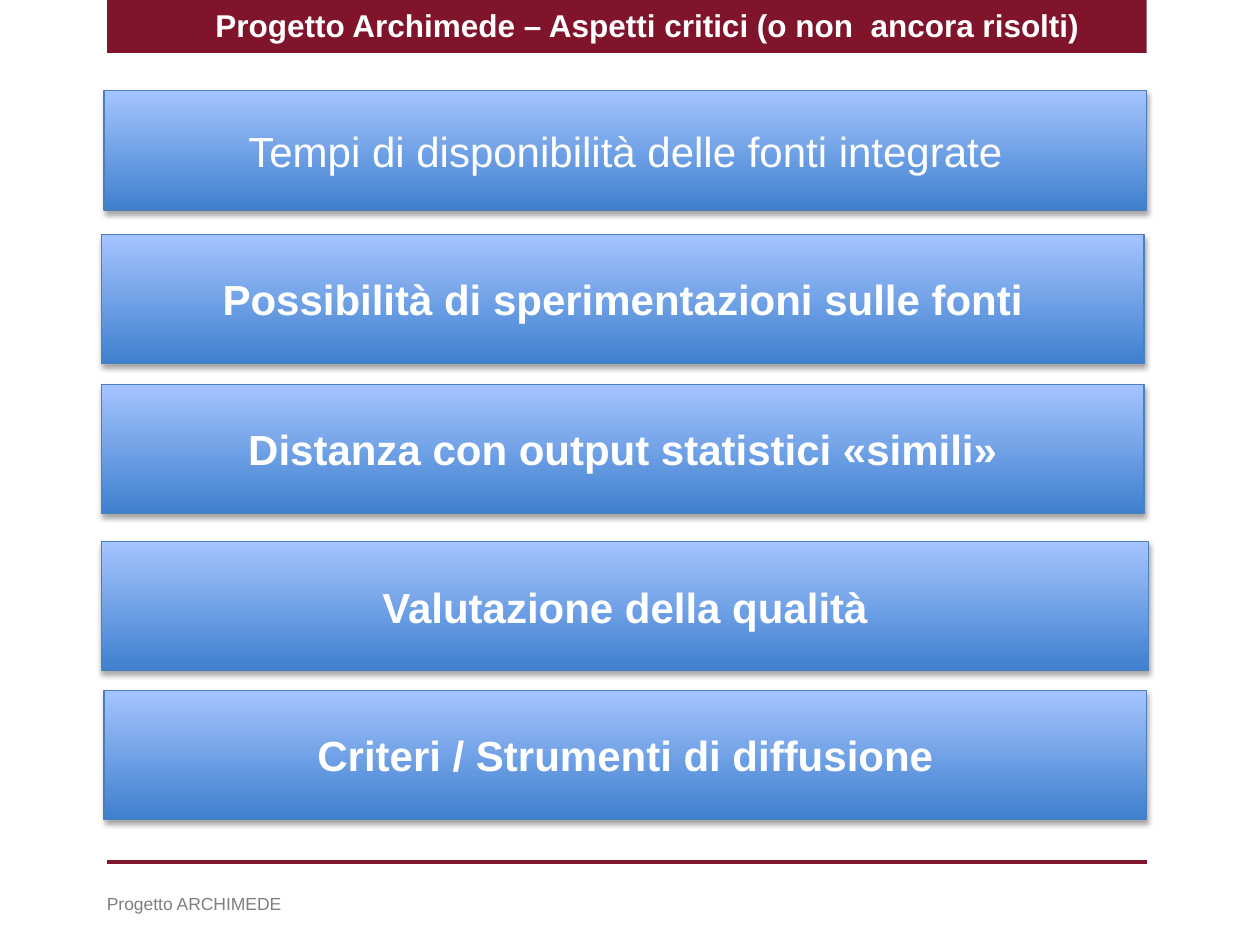
import pptx
import pptx.util
import pptx.dml.color
import pptx.enum.shapes
import pptx.enum.text
import pptx.oxml
import pptx.oxml.ns
import lxml.etree

Pt = pptx.util.Pt
PP_ALIGN = pptx.enum.text.PP_ALIGN
ANCHOR = pptx.enum.text.MSO_ANCHOR
RECTANGLE = pptx.enum.shapes.MSO_SHAPE.RECTANGLE

HEADING = "Progetto Archimede – Aspetti critici (o non  ancora risolti)"
FOOTER = "Progetto ARCHIMEDE"
ISSUES = [
    {"text": "Tempi di disponibilità delle fonti integrate", "box": (59.5, 51.9, 595.8, 68.1), "bold": False},
    {"text": "Possibilità di sperimentazioni sulle fonti", "box": (58, 134.1, 595.8, 73.7)},
    {"text": "Distanza con output statistici «simili»", "box": (58, 219.7, 595.8, 73.7)},
    {"text": "Valutazione della qualità", "box": (58, 309.6, 598.4, 73.7)},
    {"text": "Criteri / Strumenti di diffusione", "box": (59.5, 394.5, 595.8, 73.7)},
]
COLORS = {
    "maroon": "7F142A",
    "deep": "3F80CE",
    "pale": "A4C4FF",
    "edge": "4B7EBC",
    "white": "FFFFFF",
    "grey": "7F7F7F",
    "shadow": "000000",
}
FONT = "Arial"
BAND_LEFT, BAND_WIDTH, BAND_HEIGHT = 61.2, 594, 30.2
RULE_TOP = 492.5


def rgb(name):
    return pptx.dml.color.RGBColor.from_string(COLORS[name])


def points(*lengths):
    return [Pt(length) for length in lengths]


def write(shape, text, size, color="white", bold=False, align=PP_ALIGN.LEFT,
          anchor=ANCHOR.TOP, wrap=True, grow=False):
    frame = shape.text_frame
    frame.word_wrap = wrap
    frame.vertical_anchor = anchor
    sizing = pptx.enum.text.MSO_AUTO_SIZE
    frame.auto_size = sizing.SHAPE_TO_FIT_TEXT if grow else sizing.NONE
    paragraph = frame.paragraphs[0]
    paragraph.alignment = align
    run = paragraph.add_run()
    run.text = text
    run.font.name = FONT
    run.font.size = Pt(size)
    run.font.bold = bold
    run.font.color.rgb = rgb(color)


def cast_shadow(shape):
    shape.shadow.inherit = False
    effects = shape._element.spPr.find(pptx.oxml.ns.qn("a:effectLst"))
    effects.append(pptx.oxml.parse_xml(
        f'<a:outerShdw {pptx.oxml.ns.nsdecls("a")} blurRad="{Pt(3.1)}" dist="{Pt(1.8)}" '
        f'dir="5400000" rotWithShape="0"><a:srgbClr val="{COLORS["shadow"]}">'
        '<a:alpha val="35000"/></a:srgbClr></a:outerShdw>'))


def add_issue(slide, text, box, bold=True):
    panel = slide.shapes.add_shape(RECTANGLE, *points(*box))
    panel.fill.gradient()
    panel.fill.gradient_angle = 90
    for stop, color in zip(panel.fill.gradient_stops, ("deep", "pale")):
        stop.color.rgb = rgb(color)
    panel.line.color.rgb = rgb("edge")
    panel.line.width = Pt(0.75)
    cast_shadow(panel)
    write(panel, text, size=24, bold=bold, align=PP_ALIGN.CENTER, anchor=ANCHOR.MIDDLE)


def main():
    deck = pptx.Presentation()
    deck.slide_width, deck.slide_height = points(720, 540)
    slide = deck.slides.add_slide(deck.slide_layouts[5])

    heading = slide.shapes.title
    heading.left, heading.top, heading.width, heading.height = points(115.9, 0, 518.4, 28.8)
    write(heading, HEADING, size=18, bold=True, wrap=False, grow=True)

    band = slide.shapes.add_shape(RECTANGLE, *points(BAND_LEFT, 0, BAND_WIDTH, BAND_HEIGHT))
    band.shadow.inherit = False
    band.fill.solid()
    band.fill.fore_color.rgb = rgb("maroon")
    band.line.fill.background()
    heading._element.addprevious(band._element)

    rule = slide.shapes.add_connector(
        pptx.enum.shapes.MSO_CONNECTOR.STRAIGHT,
        *points(BAND_LEFT, RULE_TOP, BAND_LEFT + BAND_WIDTH, RULE_TOP))
    rule.line.color.rgb = rgb("maroon")
    rule.line.width = Pt(2)
    lxml.etree.SubElement(rule._element.spPr, pptx.oxml.ns.qn("a:effectLst"))

    for issue in ISSUES:
        add_issue(slide, **issue)

    footer = slide.shapes.add_textbox(*points(54, 506.9, 369.4, 19.4))
    write(footer, FOOTER, size=10, color="grey", grow=True)

    deck.save("out.pptx")


if __name__ == "__main__":
    main()
